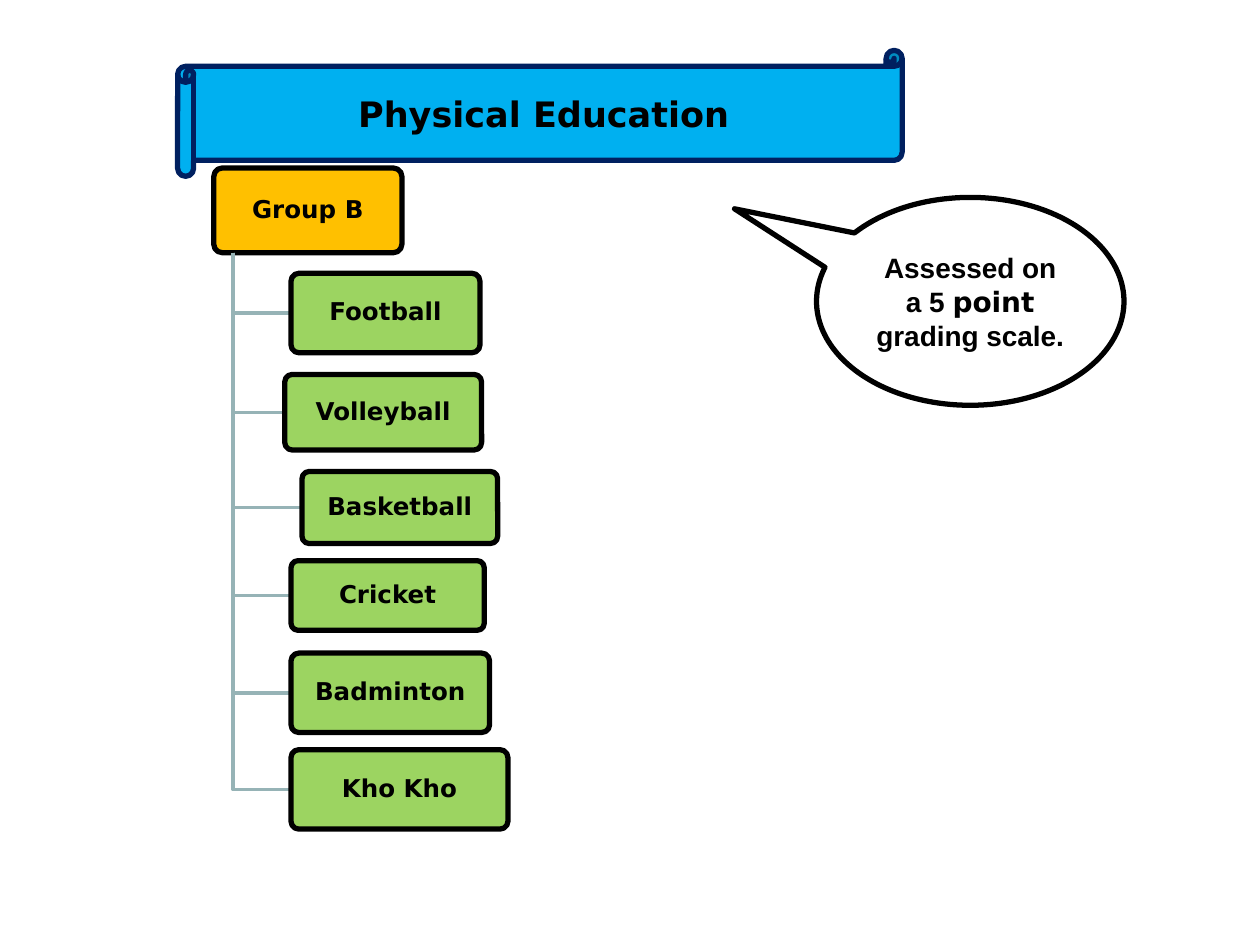
"""Build the Physical Education slide with its Group B activity tree."""
from lxml.etree import SubElement
from pptx import Presentation
from pptx.dml.color import RGBColor
from pptx.enum.shapes import MSO_SHAPE
from pptx.enum.text import MSO_ANCHOR, PP_ALIGN
from pptx.oxml.ns import qn
from pptx.util import Pt

TITLE = "Physical Education"
BANNER = (101.5, 28.8, 414, 72)
GROUP = ("Group B", 95.8 + 26.4, 96, 107.5, 48.4)
ACTIVITIES = [
    ("Football", 166.3, 156.2, 108, 45.4),
    ("Volleyball", 162.7, 214, 112.5, 43.2),
    ("Basketball", 172.6, 269.4, 111.8, 41.2),
    ("Cricket", 166.3, 320.4, 110.4, 39.8),
    ("Badminton", 166.3, 373.2, 113.5, 45.4),
    ("Kho Kho", 166.3, 428.4, 124, 45.4),
]
CALLOUT = (466.6, 112.8, 175.7, 118.8)
CALLOUT_RUNS = [("Assessed on a 5 ", "body"), ("point", "label"), (" grading scale.", "body")]
TRUNK_INDENT = 10.8


class Theme:
    ink = "000000"
    navy = "002060"
    sky = "00B0F0"
    amber = "FFC000"
    green = "92D050"
    branch = "96B3B6"
    fonts = {"label": "DejaVu Sans", "body": "Arial"}
    title_size, callout_size, box_size = 20, 16, 14
    outline_width, branch_width = 3, 2
    box_margin = 3.5
    green_alpha = 90


def apply(target, formats):
    for name, value in formats.items():
        setattr(target, name, value)


def place(box):
    return [Pt(length) for length in box]


def style_line(shape, color, width):
    shape.shadow.inherit = False
    shape.line.color.rgb = RGBColor.from_string(color)
    shape.line.width = Pt(width)


def add_block(slide, preset, box, fill, outline, adjustments):
    shape = slide.shapes.add_shape(preset, *place(box))
    for index, value in enumerate(adjustments):
        shape.adjustments[index] = value
    style_line(shape, outline, Theme.outline_width)
    if fill:
        shape.fill.solid()
        shape.fill.fore_color.rgb = RGBColor.from_string(fill)
    else:
        shape.fill.background()
    return shape


def write(shape, runs, size, frame_formats=None, paragraph_formats=None):
    frame = shape.text_frame
    apply(frame, {"word_wrap": True, "vertical_anchor": MSO_ANCHOR.MIDDLE, **(frame_formats or {})})
    paragraph = frame.paragraphs[0]
    apply(paragraph, {"alignment": PP_ALIGN.CENTER, **(paragraph_formats or {})})
    for text, font in runs:
        run = paragraph.add_run()
        run.text = text
        apply(run.font, {"name": Theme.fonts[font], "size": Pt(size), "bold": True})
        run.font.color.rgb = RGBColor.from_string(Theme.ink)


def add_box(slide, entry, fill):
    text, *box = entry
    shape = add_block(slide, MSO_SHAPE.ROUNDED_RECTANGLE, box, fill, Theme.ink, [0.1])
    margins = {f"margin_{side}": Pt(Theme.box_margin) for side in ("left", "top", "right", "bottom")}
    write(shape, [(text, "label")], Theme.box_size, margins, {"line_spacing": 0.9})
    return shape


def add_branch(slide, entry):
    _, left, top, _, height = entry
    _, group_left, group_top, _, group_height = GROUP
    trunk = Pt(group_left + TRUNK_INDENT)
    middle = Pt(top + height / 2)
    builder = slide.shapes.build_freeform(trunk, Pt(group_top + group_height))
    builder.add_line_segments([(trunk, middle), (Pt(left), middle)], close=False)
    shape = builder.convert_to_shape()
    shape.fill.background()
    style_line(shape, Theme.branch, Theme.branch_width)


def add_activity(slide, entry):
    add_branch(slide, entry)
    shape = add_box(slide, entry, Theme.green)
    color = shape.fill._xPr.find(qn("a:solidFill"))[0]
    SubElement(color, qn("a:alpha"), val=str(Theme.green_alpha * 1000))


def add_title(slide):
    add_block(slide, MSO_SHAPE.HORIZONTAL_SCROLL, BANNER, Theme.sky, Theme.navy, [0.127])
    left, top, width, height = BANNER
    curl = height * 0.127
    title = slide.shapes.title
    text_area = (left + curl, top + curl, width - 1.5 * curl, height - 2 * curl)
    apply(title, dict(zip(("left", "top", "width", "height"), place(text_area))))
    write(title, [(TITLE, "label")], Theme.title_size)
    slide.shapes._spTree.append(title._element)


def main():
    presentation = Presentation()
    apply(presentation, {"slide_width": Pt(720), "slide_height": Pt(540)})
    slide = presentation.slides.add_slide(presentation.slide_layouts[5])
    callout = add_block(slide, MSO_SHAPE.OVAL_CALLOUT, CALLOUT, None, Theme.ink, [-0.767, -0.445])
    write(callout, CALLOUT_RUNS, Theme.callout_size)
    add_box(slide, GROUP, Theme.amber)
    for entry in ACTIVITIES:
        add_activity(slide, entry)
    add_title(slide)
    presentation.save("out.pptx")


if __name__ == "__main__":
    main()
